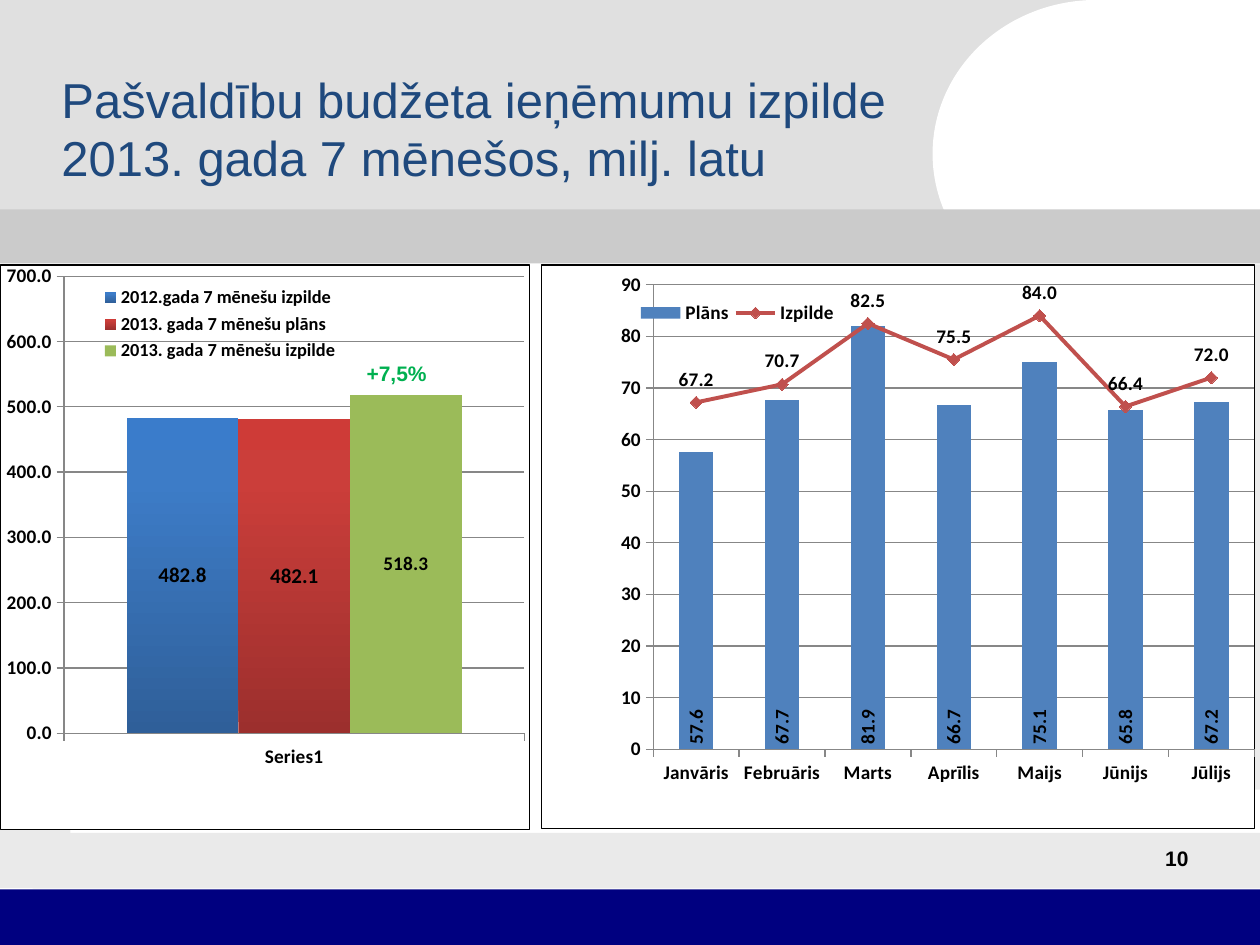
from copy import deepcopy

from pptx import Presentation
from pptx.chart.data import CategoryChartData
from pptx.dml.color import RGBColor
from pptx.enum import chart as ch, shapes, text
from pptx.oxml import parse_xml
from pptx.oxml.ns import nsdecls, qn
from pptx.util import Cm, Pt

BLACK = RGBColor(0, 0, 0)
WHITE = RGBColor(0xFF, 0xFF, 0xFF)
SILVER = RGBColor(0xE0, 0xE0, 0xE0)
PALE = RGBColor(0xEA, 0xEA, 0xEA)
BAND = RGBColor(0xCB, 0xCB, 0xCB)
NAVY = RGBColor(0, 0, 0x80)
TITLE = RGBColor(0x1F, 0x49, 0x7D)
GROWTH = RGBColor(0, 0xB0, 0x50)
GRID = RGBColor(0x87, 0x87, 0x87)
BLUE = RGBColor(0x4F, 0x81, 0xBD)
RED = RGBColor(0xC0, 0x50, 0x4D)
GREEN = RGBColor(0x9B, 0xBB, 0x59)
BLUES = [RGBColor(0x2F, 0x5F, 0x99), RGBColor(0x3D, 0x7C, 0xC7), RGBColor(0x3A, 0x7C, 0xCB)]
REDS = [RGBColor(0x9C, 0x2F, 0x2D), RGBColor(0xCB, 0x3E, 0x3A), RGBColor(0xCE, 0x3B, 0x37)]

RECT = shapes.MSO_SHAPE.RECTANGLE
OVAL = shapes.MSO_SHAPE.OVAL
POS = ch.XL_LABEL_POSITION

# kind, left, top, width, height, colour
BACK = [
    (RECT, 0, 0, 23.09, 4.29, SILVER),
    (OVAL, 18.8, 0, 6.6, 6.2, WHITE),
    (RECT, 0, 5.33, 1.42, 12.57, PALE),
    (RECT, 0.66, 16.79, 24.74, 1.12, PALE),
    (RECT, 0, 17.93, 25.4, 1.12, NAVY),
    (RECT, 23.47, 5.33, 1.93, 10.59, PALE),
    (RECT, 21.89, 0, 3.51, 5.13, WHITE),
    (RECT, 0, 4.22, 25.4, 1.09, BAND),
]


def block(slide, kind, x, y, w, h, color):
    shape = slide.shapes.add_shape(kind, Cm(x), Cm(y), Cm(w), Cm(h))
    shape.shadow.inherit = False
    shape.fill.solid()
    shape.fill.fore_color.rgb = color
    shape.line.fill.background()


def style(font, size, color, bold=True, name="Arial"):
    font.name, font.size, font.bold = name, Pt(size), bold
    font.color.rgb = color


def label(slide, words, x, y, w, h, size, color, bold=True):
    frame = slide.shapes.add_textbox(Cm(x), Cm(y), Cm(w), Cm(h)).text_frame
    frame.word_wrap = True
    frame.text = words
    style(frame.paragraphs[0].font, size, color, bold)
    return frame


def place(parent, index, x, y, w, h, inner=False):
    """Give a plot area or legend a fixed place, in shares of the chart."""
    for old in parent.findall(qn("c:layout")):
        parent.remove(old)
    target = '<c:layoutTarget val="inner"/>' if inner else ""
    parent.insert(index, parse_xml(
        f'<c:layout {nsdecls("c")}><c:manualLayout>{target}'
        '<c:xMode val="edge"/><c:yMode val="edge"/>'
        f'<c:x val="{x}"/><c:y val="{y}"/><c:w val="{w}"/><c:h val="{h}"/>'
        '</c:manualLayout></c:layout>'))


def frame(chart):
    """Give the chart a white ground and a thin black border."""
    chart._chartSpace.find(qn("c:chart")).addnext(parse_xml(
        f'<c:spPr {nsdecls("c", "a")}>'
        f'<a:solidFill><a:srgbClr val="{WHITE}"/></a:solidFill>'
        f'<a:ln w="9525"><a:solidFill><a:srgbClr val="{BLACK}"/></a:solidFill></a:ln>'
        '</c:spPr>'))


def columns(slide, box, cats, rows, top, step, fmt, gap, plot, key, side):
    data = CategoryChartData()
    data.categories = cats
    for name, vals in rows:
        data.add_series(name, vals)
    chart = slide.shapes.add_chart(
        ch.XL_CHART_TYPE.COLUMN_CLUSTERED, *map(Cm, box), data).chart
    frame(chart)
    style(chart.font, 11, BLACK, name="Calibri")
    chart.has_title = False
    chart.has_legend = True
    chart.legend.position = side
    chart.legend.include_in_layout = False
    place(chart.legend._element, 1, *key)
    place(chart._chartSpace.chart.plotArea, 0, *plot, inner=True)
    chart.plots[0].gap_width = gap
    chart.plots[0].overlap = 0
    chart.plots[0].vary_by_categories = False
    axis = chart.value_axis
    axis.minimum_scale, axis.maximum_scale, axis.major_unit = 0, top, step
    axis.tick_labels.number_format = fmt
    axis.tick_labels.number_format_is_linked = False
    axis.major_gridlines.format.line.color.rgb = GRID
    for item in (axis, chart.category_axis):
        item.major_tick_mark = ch.XL_TICK_MARK.OUTSIDE
        item.format.line.color.rgb = GRID
    return chart


def values(series, pos, size=11):
    tags = series.data_labels
    tags.show_value = True
    tags.number_format = "#,##0.0"
    tags.number_format_is_linked = False
    tags.position = pos
    style(tags.font, size, BLACK, name="Calibri")
    return tags


def solid(series, color):
    series.format.fill.solid()
    series.format.fill.fore_color.rgb = color


def shade(series, colors):
    fill = series.format.fill
    fill.gradient()
    fill.gradient_angle = 90
    stops = series._element.xpath(".//a:gsLst")[0]
    stops.append(deepcopy(stops[-1]))
    for stop, spot, color in zip(fill.gradient_stops, (0, 0.8, 1), colors):
        stop.position = spot
        stop.color.rgb = color


def to_line(chart):
    """Move the last column series to a line plot on the same axes."""
    bars = chart.plots[0]._element
    ser = bars.findall(qn("c:ser"))[-1]
    line = parse_xml(
        f'<c:lineChart {nsdecls("c")}><c:grouping val="standard"/>'
        '<c:varyColors val="0"/><c:marker val="1"/></c:lineChart>')
    for old in ser.findall(qn("c:invertIfNegative")):
        ser.remove(old)
    line.insert(2, ser)
    for axis in bars.findall(qn("c:axId")):
        line.append(deepcopy(axis))
    bars.addnext(line)
    return chart.plots[1].series[0]


def totals(slide):
    rows = [("2012.gada 7 mēnešu izpilde", [482.8]),
            ("2013. gada 7 mēnešu plāns", [482.1]),
            ("2013. gada 7 mēnešu izpilde", [518.3])]
    chart = columns(slide, (0, 5.33, 10.69, 11.4), ["Series1"], rows, 700, 100, "0.0", 112,
                    (0.12, 0.02, 0.87, 0.81), (0.18, 0.03, 0.47, 0.15),
                    ch.XL_LEGEND_POSITION.RIGHT)
    style(chart.legend.font, 10.5, BLACK, name="Calibri")
    last, plan, done = chart.plots[0].series
    shade(last, BLUES)
    shade(plan, REDS)
    solid(done, GREEN)
    for series, size in ((last, 12), (plan, 12), (done, 11)):
        values(series, POS.CENTER, size)


def months(slide):
    cats = ["Janvāris", "Februāris", "Marts", "Aprīlis", "Maijs", "Jūnijs", "Jūlijs"]
    rows = [("Plāns", [57.6, 67.7, 81.9, 66.7, 75.1, 65.8, 67.2]),
            ("Izpilde", [67.2, 70.7, 82.5, 75.5, 84, 66.4, 72])]
    chart = columns(slide, (10.9, 5.33, 14.4, 11.38), cats, rows, 90, 10, "General", 150,
                    (0.157, 0.035, 0.843, 0.825), (0.13, 0.05, 0.29, 0.07),
                    ch.XL_LEGEND_POSITION.BOTTOM)
    done = to_line(chart)
    plan = chart.plots[0].series[0]
    solid(plan, BLUE)
    tags = values(plan, POS.INSIDE_BASE)
    turn = tags._element.find(qn("c:txPr")).find(qn("a:bodyPr"))
    turn.set("rot", "-5400000")
    turn.set("vert", "horz")
    done.smooth = False
    done.format.line.color.rgb = RED
    done.format.line.width = Pt(2.25)
    done.marker.style = ch.XL_MARKER_STYLE.DIAMOND
    done.marker.size = 7
    solid(done.marker, RED)
    done.marker.format.line.color.rgb = RED
    values(done, POS.ABOVE)


def main():
    deck = Presentation()
    deck.slide_width, deck.slide_height = Cm(25.4), Cm(19.05)
    slide = deck.slides.add_slide(deck.slide_layouts[6])
    for part in BACK:
        block(slide, *part)
    title = label(slide, "Pašvaldību budžeta ieņēmumu izpilde\v2013. gada 7 mēnešos, milj. latu",
                  0.99, 0.99, 19.05, 3.18, 28, TITLE, False)
    title.vertical_anchor = text.MSO_ANCHOR.MIDDLE
    page = label(slide, "10", 18.47, 16.92, 5.74, 1.27, 12, BLACK)
    page.paragraphs[0].alignment = text.PP_ALIGN.RIGHT
    totals(slide)
    label(slide, "+7,5%", 7.14, 7.14, 2.01, 0.76, 12, GROWTH)
    months(slide)
    deck.save("out.pptx")


if __name__ == "__main__":
    main()
